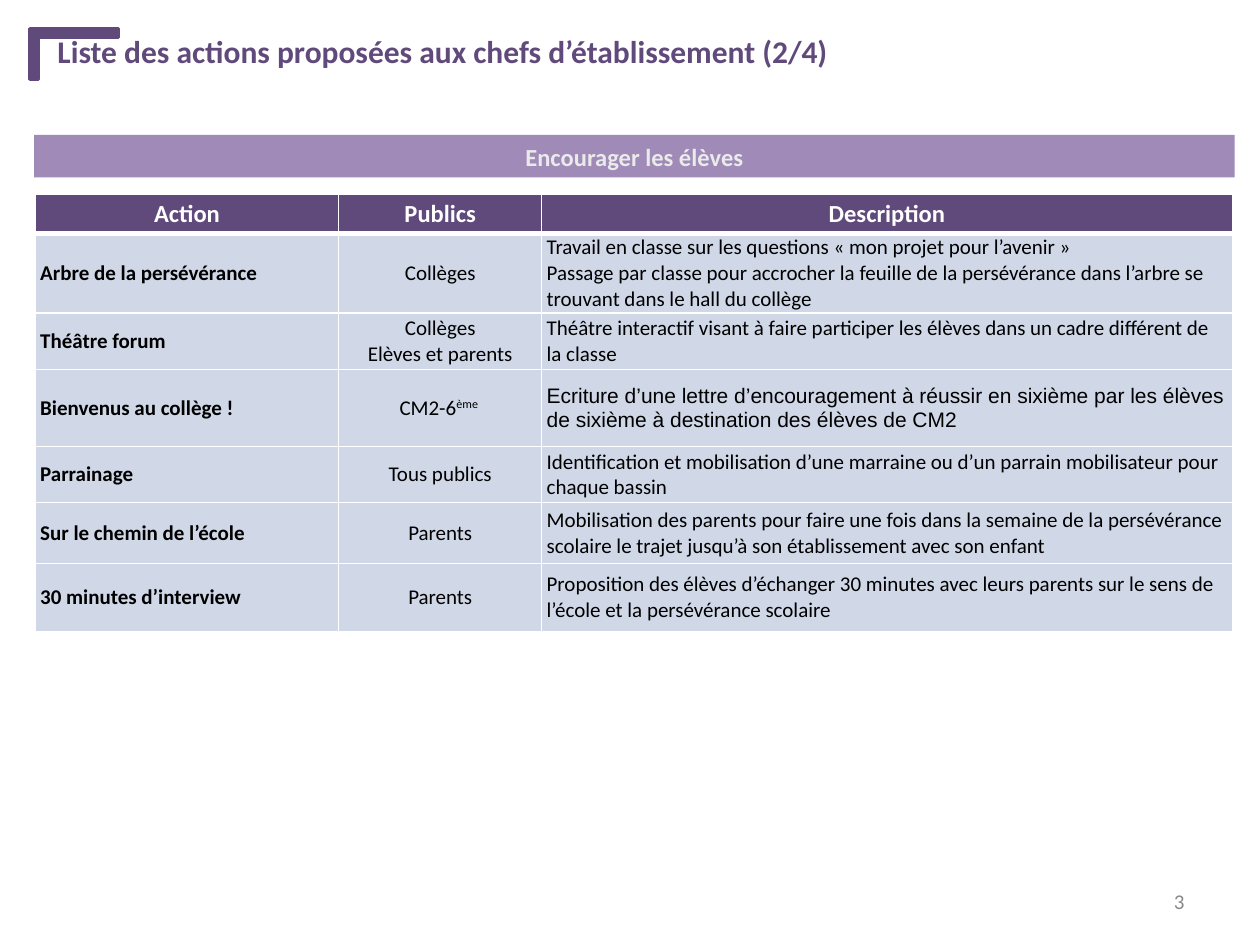
from lxml.etree import SubElement
from pptx import Presentation
from pptx.dml.color import RGBColor
from pptx.enum.shapes import MSO_SHAPE
from pptx.enum.text import MSO_ANCHOR, PP_ALIGN
from pptx.oxml.ns import qn
from pptx.util import Cm, Pt

PURPLE = RGBColor(0x60, 0x4A, 0x7B)
LILAC = RGBColor(0x9F, 0x8A, 0xB8)
PALE_BLUE = RGBColor(0xD0, 0xD8, 0xE8)
PALE_GREY = RGBColor(0xEA, 0xEA, 0xEA)
GREY = RGBColor(0x89, 0x89, 0x89)
WHITE = RGBColor(0xFF, 0xFF, 0xFF)
BLACK = RGBColor(0, 0, 0)

HEADERS = ["Action", "Publics", "Description"]
# Action, audience, description, row height and vertical cell margin in cm
ACTIONS = [
    ("Arbre de la persévérance", "Collèges",
     "Travail en classe sur les questions « mon projet pour l’avenir »\n"
     "Passage par classe pour accrocher la feuille de la persévérance dans l’arbre "
     "se trouvant dans le hall du collège", 1.6, 0),
    ("Théâtre forum", "Collèges\nElèves et parents",
     "Théâtre interactif visant à faire participer les élèves dans un cadre "
     "différent de la classe", 1.14, 0),
    ("Bienvenus au collège !", "CM2-6",
     "Ecriture d’une lettre d’encouragement à réussir en sixième par les élèves "
     "de sixième à destination des élèves de CM2", 1.55, 0.1),
    ("Parrainage", "Tous publics",
     "Identification et mobilisation d’une marraine ou d’un parrain mobilisateur "
     "pour chaque bassin", 1.14, 0),
    ("Sur le chemin de l’école", "Parents",
     "Mobilisation des parents pour faire une fois dans la semaine de la "
     "persévérance scolaire le trajet jusqu’à son établissement avec son enfant",
     1.14, 0.1),
    ("30 minutes d’interview", "Parents",
     "Proposition des élèves d’échanger 30 minutes avec leurs parents sur le sens "
     "de l’école et la persévérance scolaire", 1.37, 0),
]
LETTER_ROW = 3


def format_text(text_frame, size, color, bold=False, align=PP_ALIGN.LEFT, font="Calibri"):
    for paragraph in text_frame.paragraphs:
        paragraph.alignment = align
        for run in paragraph.runs:
            run.font.name = font
            run.font.size = Pt(size)
            run.font.bold = bold
            run.font.color.rgb = color


def set_borders(cell, **widths):
    """Draw white cell borders; widths in points are keyed by L, R, T and B."""
    properties = cell._tc.get_or_add_tcPr()
    for side, width in widths.items():
        line = SubElement(properties, qn(f"a:ln{side}"), w=str(Pt(width)))
        fill = SubElement(line, qn("a:solidFill"))
        SubElement(fill, qn("a:srgbClr"), val=str(WHITE))


presentation = Presentation()
presentation.slide_width = Cm(25.4)
presentation.slide_height = Cm(19.05)
slide = presentation.slides.add_slide(presentation.slide_layouts[6])

# Title
title = slide.shapes.add_textbox(Cm(0.91), Cm(0.53), Cm(23.9), Cm(1.02))
title.text_frame.word_wrap = True
title.text_frame.text = "Liste des actions proposées aux chefs d’établissement (2/4)"
format_text(title.text_frame, 18, PURPLE, bold=True)

# Table of actions
table = slide.shapes.add_table(len(ACTIONS) + 1, len(HEADERS), Cm(0.71), Cm(3.91),
                               Cm(24.1), Cm(8.74)).table
table.horz_banding = False
for column, width in zip(table.columns, (6.12, 4.09, 13.92)):
    column.width = Cm(width)

table.rows[0].height = Cm(0.8)
for column_index, header in enumerate(HEADERS):
    cell = table.cell(0, column_index)
    cell.margin_left = cell.margin_right = Cm(0.1)
    cell.margin_top = cell.margin_bottom = Cm(0.1)
    cell.text_frame.text = header
    format_text(cell.text_frame, 14, WHITE, bold=True, align=PP_ALIGN.CENTER)
    set_borders(cell, L=0.75, R=0.75, T=0.75, B=3)
    cell.fill.solid()
    cell.fill.fore_color.rgb = PURPLE

for row_index, (*texts, height, margin) in enumerate(ACTIONS, start=1):
    table.rows[row_index].height = Cm(height)
    for column_index, text in enumerate(texts):
        cell = table.cell(row_index, column_index)
        cell.margin_left = cell.margin_right = Cm(0.1)
        cell.margin_top = cell.margin_bottom = Cm(margin)
        cell.vertical_anchor = MSO_ANCHOR.MIDDLE
        cell.text_frame.text = text
        if row_index == LETTER_ROW and column_index == 1:
            superscript = cell.text_frame.paragraphs[0].add_run()
            superscript.text = "ème "
            superscript._r.get_or_add_rPr().set("baseline", "30000")
        format_text(
            cell.text_frame, 12, BLACK, bold=column_index == 0,
            align=PP_ALIGN.CENTER if column_index == 1 else PP_ALIGN.LEFT,
            font="Arial" if row_index == LETTER_ROW and column_index == 2 else "Calibri")
        set_borders(cell, L=0.75, R=0.75, T=3 if row_index == 1 else 0.75, B=0.75)
        cell.fill.solid()
        cell.fill.fore_color.rgb = PALE_BLUE

# Page number
page_number = slide.shapes.add_textbox(Cm(18.21), Cm(17.65), Cm(5.92), Cm(1.02))
page_number.text_frame.word_wrap = True
page_number.text_frame.vertical_anchor = MSO_ANCHOR.MIDDLE
page_number.text_frame.text = "3"
format_text(page_number.text_frame, 12, GREY, align=PP_ALIGN.RIGHT)

# Corner ornament
corner = slide.shapes.add_shape(MSO_SHAPE.CORNER, Cm(0.99), Cm(0.2), Cm(1.02), Cm(1.78))
corner.rotation = 90
corner.adjustments[0] = 0.16
corner.adjustments[1] = 0.17
corner.shadow.inherit = False
corner.fill.solid()
corner.fill.fore_color.rgb = PURPLE
corner.line.color.rgb = PURPLE
corner.line.width = Pt(2)

# Section banner
banner = slide.shapes.add_shape(MSO_SHAPE.RECTANGLE, Cm(0.69), Cm(2.72), Cm(24.2), Cm(0.86))
banner.shadow.inherit = False
banner.fill.solid()
banner.fill.fore_color.rgb = LILAC
banner.line.fill.background()
banner.text_frame.word_wrap = True
banner.text_frame.text = "Encourager les élèves"
format_text(banner.text_frame, 14, PALE_GREY, bold=True, align=PP_ALIGN.CENTER)

presentation.save("out.pptx")
